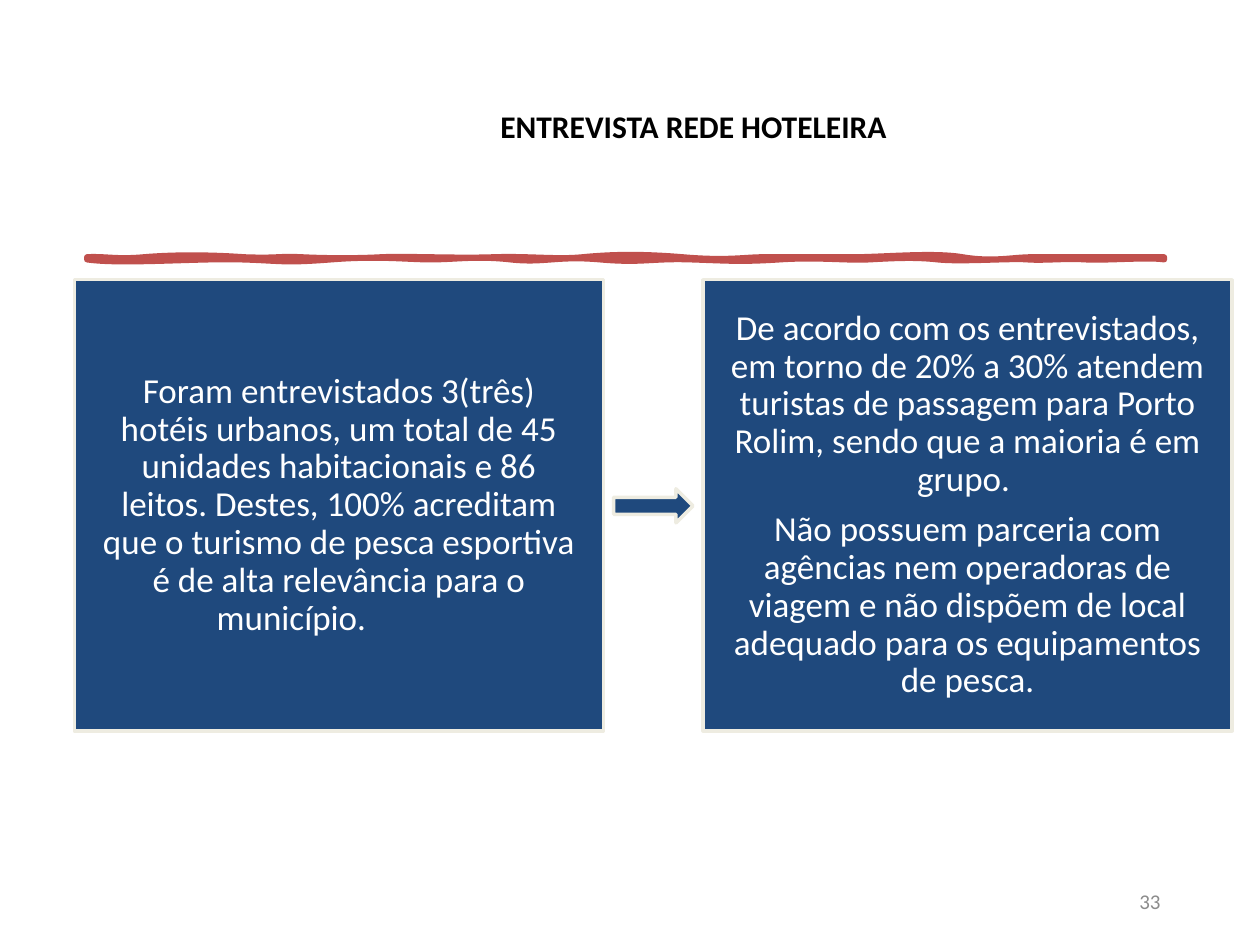
from dataclasses import dataclass

from lxml.etree import SubElement
from pptx import Presentation
from pptx.dml.color import RGBColor
from pptx.enum.shapes import MSO_SHAPE
from pptx.enum.text import MSO_ANCHOR, MSO_AUTO_SIZE, PP_ALIGN
from pptx.oxml.ns import qn
from pptx.shapes.autoshape import Shape
from pptx.slide import Slide
from pptx.text.text import TextFrame
from pptx.util import Inches, Pt


@dataclass(frozen=True)
class Theme:
    """Colours, font and sizes of the slide."""
    font: str = "Calibri"
    navy: RGBColor = RGBColor(0x1F, 0x49, 0x7D)
    cream: RGBColor = RGBColor(0xEE, 0xEC, 0xE1)
    red: RGBColor = RGBColor(0xC0, 0x50, 0x4D)
    white: RGBColor = RGBColor(0xFF, 0xFF, 0xFF)
    black: RGBColor = RGBColor(0, 0, 0)
    grey: RGBColor = RGBColor(0x8C, 0x8C, 0x8C)
    title_size: int = 18
    body_size: int = 20
    number_size: int = 12
    outline: float = 2
    brush: float = 3.25


@dataclass(frozen=True)
class Bounds:
    """Position and size in inches."""
    left: float
    top: float
    width: float
    height: float

    def lengths(self) -> tuple[Inches, ...]:
        """Return the four values as lengths."""
        return tuple(Inches(value) for value in (self.left, self.top, self.width, self.height))


@dataclass(frozen=True)
class Panel:
    """A text panel in the process row."""
    bounds: Bounds
    texts: tuple[str, ...]


Point = tuple[float, float]
Curve = tuple[Point, Point, Point]

THEME = Theme()
PANEL_WIDTH, PANEL_TOP, PANEL_HEIGHT = 4.2, 2.22, 3.58
PANELS = (
    Panel(Bounds(0.59, PANEL_TOP, PANEL_WIDTH, PANEL_HEIGHT), (
        "Foram entrevistados 3(três) hotéis urbanos, um total de 45 unidades habitacionais "
        "e 86 leitos. Destes, 100% acreditam que o turismo de pesca esportiva é de alta "
        "relevância para o município.\t",
    )),
    Panel(Bounds(5.58, PANEL_TOP, PANEL_WIDTH, PANEL_HEIGHT), (
        "De acordo com os entrevistados, em torno de 20% a 30% atendem turistas de "
        "passagem para Porto Rolim, sendo que a maioria é em grupo. ",
        "Não possuem parceria com agências nem operadoras de viagem e não dispõem de "
        "local adequado para os equipamentos de pesca.",
    )),
)
ARROW = Bounds(4.87, 3.88, 0.63, 0.27)
BRUSH_START: Point = (0.69, 2.04)
BRUSH_TURN: Point = (9.24, 2.06)
UPPER_EDGE: tuple[Curve, ...] = (
    ((0.82, 2.03), (0.92, 2.06), (1.14, 2.04)),
    ((1.37, 2.02), (1.66, 2.02), (1.94, 2.04)),
    ((2.22, 2.05), (2.2, 2.03), (2.4, 2.04)),
    ((2.6, 2.05), (2.84, 2.05), (3.02, 2.04)),
    ((3.2, 2.03), (3.62, 2.05), (3.91, 2.04)),
    ((4.2, 2.03), (4.42, 2.06), (4.62, 2.04)),
    ((4.83, 2.02), (5.06, 2.01), (5.42, 2.04)),
    ((5.77, 2.07), (5.91, 2.04), (6.05, 2.04)),
    ((6.18, 2.04), (6.5, 2.04), (6.76, 2.04)),
    ((7.01, 2.04), (7.41, 2.0), (7.64, 2.04)),
    ((7.88, 2.08), (8.04, 2.04), (8.18, 2.04)),
    ((8.32, 2.04), (8.78, 2.04), (9.24, 2.04)),
)
LOWER_EDGE: tuple[Curve, ...] = (
    ((9.11, 2.04), (8.77, 2.07), (8.61, 2.06)),
    ((8.45, 2.05), (8.29, 2.07), (8.15, 2.06)),
    ((8.02, 2.05), (7.62, 2.08), (7.44, 2.06)),
    ((7.26, 2.04), (7.09, 2.05), (6.9, 2.06)),
    ((6.72, 2.07), (6.5, 2.04), (6.19, 2.06)),
    ((5.88, 2.08), (5.78, 2.07), (5.48, 2.06)),
    ((5.17, 2.05), (5.1, 2.09), (4.76, 2.06)),
    ((4.42, 2.03), (4.32, 2.09), (4.05, 2.06)),
    ((3.78, 2.03), (3.62, 2.06), (3.42, 2.06)),
    ((3.22, 2.06), (3.01, 2.03), (2.63, 2.06)),
    ((2.24, 2.09), (2.25, 2.07), (1.91, 2.06)),
    ((1.57, 2.05), (0.96, 2.1), (0.69, 2.06)),
)


def paint(shape: Shape, *, fill: RGBColor, line: RGBColor, width: float) -> None:
    """Give a shape a flat fill and outline."""
    shape.shadow.inherit = False
    shape.fill.solid()
    shape.fill.fore_color.rgb = fill
    shape.line.color.rgb = line
    shape.line.width = Pt(width)


def write(frame: TextFrame, *texts: str, size: float, color: RGBColor,
          align: PP_ALIGN = PP_ALIGN.CENTER, anchor: MSO_ANCHOR = MSO_ANCHOR.MIDDLE,
          bold: bool = False, spacing: float = 1.0, after: float = 0,
          inset: float | None = None, tab: float | None = None) -> None:
    """Fill a text frame with formatted paragraphs."""
    frame.word_wrap = True
    frame.auto_size = MSO_AUTO_SIZE.NONE
    frame.vertical_anchor = anchor
    if inset is not None:
        frame.margin_left = frame.margin_right = Inches(inset)
        frame.margin_top = frame.margin_bottom = Inches(inset)
    for index, text in enumerate(texts):
        para = frame.add_paragraph() if index else frame.paragraphs[0]
        para.alignment = align
        para.line_spacing = spacing
        para.space_after = Pt(after)
        if tab is not None:
            para._p.get_or_add_pPr().set("defTabSz", str(Inches(tab)))
        span = para.add_run()
        span.text = text
        span.font.name = THEME.font
        span.font.size = Pt(size)
        span.font.bold = bold
        span.font.color.rgb = color


def draw_title(slide: Slide) -> None:
    """Place and format the title."""
    title = slide.shapes.title
    title.left, title.top, title.width, title.height = Bounds(3.26, 0.8, 4.49, 0.71).lengths()
    write(title.text_frame, "ENTREVISTA REDE HOTELEIRA", size=THEME.title_size,
          color=THEME.black, bold=True, anchor=MSO_ANCHOR.TOP)


def draw_brush(slide: Slide) -> None:
    """Draw the wavy rule under the title with curved edges."""
    turn: Curve = (BRUSH_TURN, BRUSH_TURN, BRUSH_TURN)
    curves = (*UPPER_EDGE, turn, *LOWER_EDGE)
    builder = slide.shapes.build_freeform(*map(Inches, BRUSH_START))
    builder.add_line_segments([tuple(map(Inches, curve[-1])) for curve in curves], close=True)
    brush = builder.convert_to_shape()
    for segment, curve in zip(list(brush._element.iter(qn("a:lnTo"))), curves):
        if curve is turn:
            continue
        segment.tag = qn("a:cubicBezTo")
        segment.remove(segment[0])
        for x, y in curve:
            SubElement(segment, qn("a:pt"), x=str(Inches(x) - brush.left),
                       y=str(Inches(y) - brush.top))
    paint(brush, fill=THEME.red, line=THEME.red, width=THEME.brush)


def draw_block(slide: Slide, kind: MSO_SHAPE, bounds: Bounds) -> Shape:
    """Draw one navy block of the process row."""
    block = slide.shapes.add_shape(kind, *bounds.lengths())
    paint(block, fill=THEME.navy, line=THEME.cream, width=THEME.outline)
    return block


def draw_panel(slide: Slide, panel: Panel) -> None:
    """Draw a panel with its text."""
    block = draw_block(slide, MSO_SHAPE.RECTANGLE, panel.bounds)
    write(block.text_frame, *panel.texts, size=THEME.body_size, color=THEME.white,
          spacing=0.9, after=0.35 * THEME.body_size, inset=0.17, tab=0.97)


def draw_number(slide: Slide) -> None:
    """Write the page number."""
    box = slide.shapes.add_textbox(*Bounds(7.06, 6.95, 2.25, 0.4).lengths())
    write(box.text_frame, "33", size=THEME.number_size, color=THEME.grey, align=PP_ALIGN.RIGHT)


def main() -> None:
    """Build and save the deck."""
    deck = Presentation()
    deck.slide_width, deck.slide_height = Inches(10), Inches(7.5)
    slide = deck.slides.add_slide(deck.slide_layouts.get_by_name("Title Only"))
    draw_title(slide)
    draw_brush(slide)
    draw_number(slide)
    for panel in PANELS:
        draw_panel(slide, panel)
    draw_block(slide, MSO_SHAPE.RIGHT_ARROW, ARROW)
    deck.save("out.pptx")


if __name__ == "__main__":
    main()
